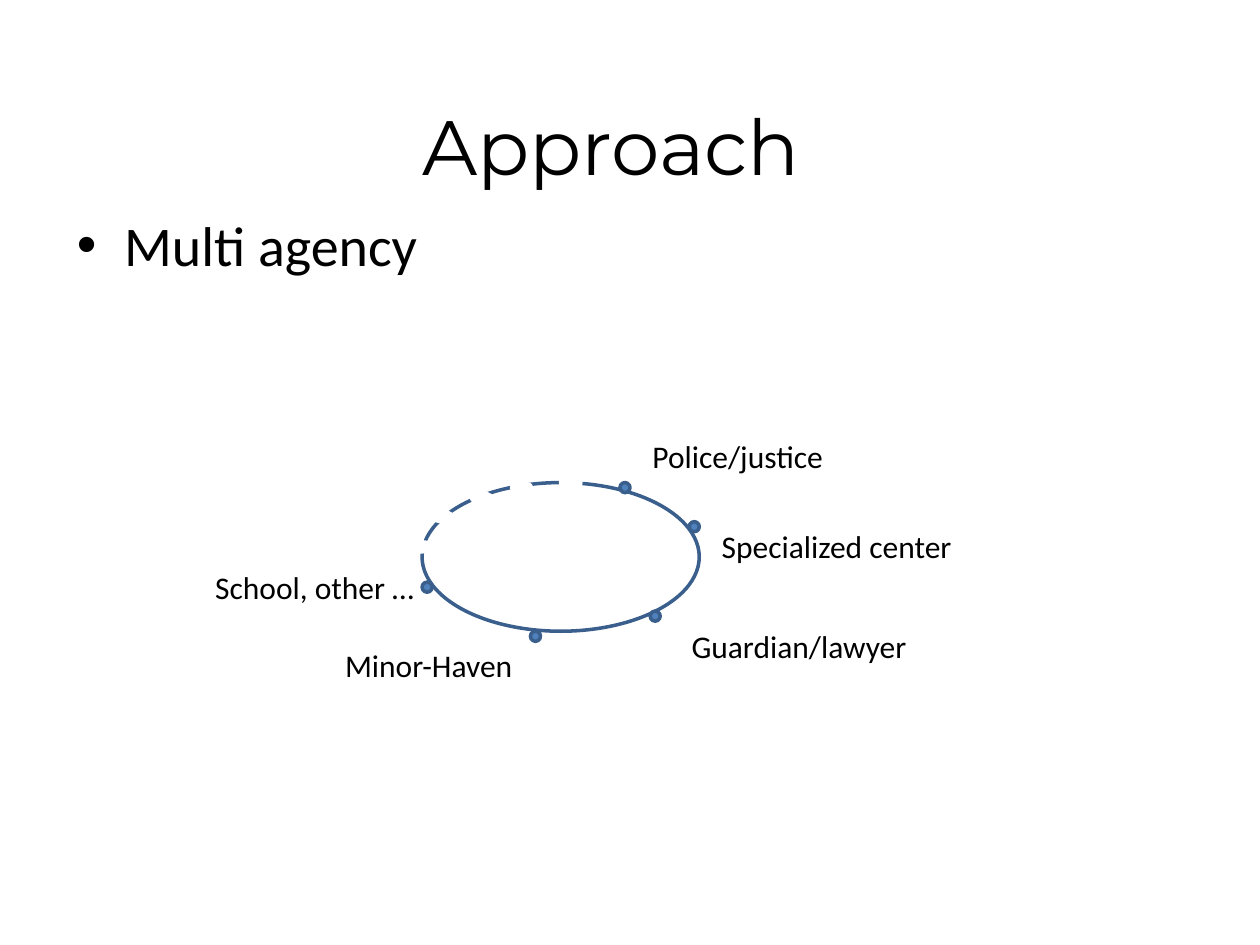
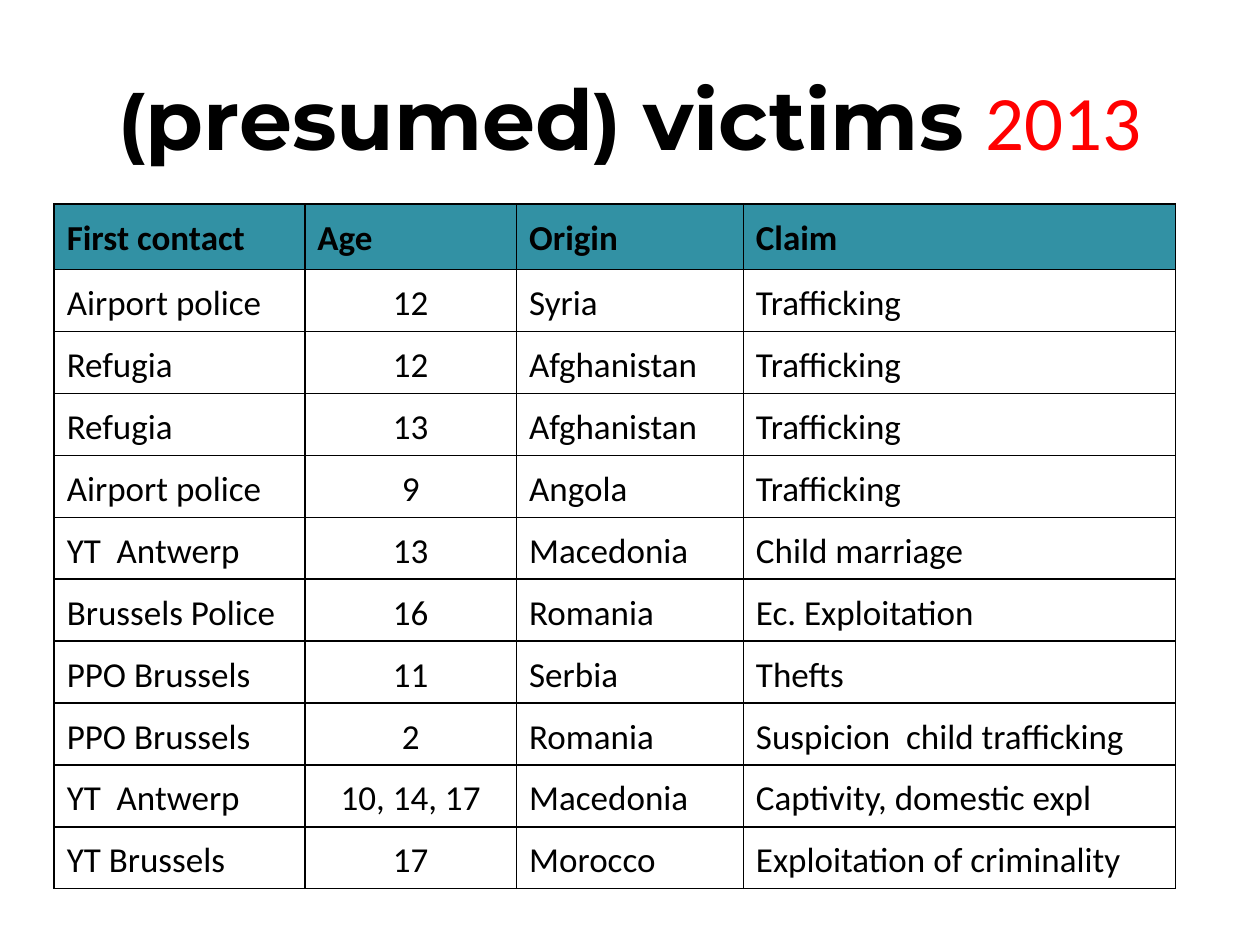
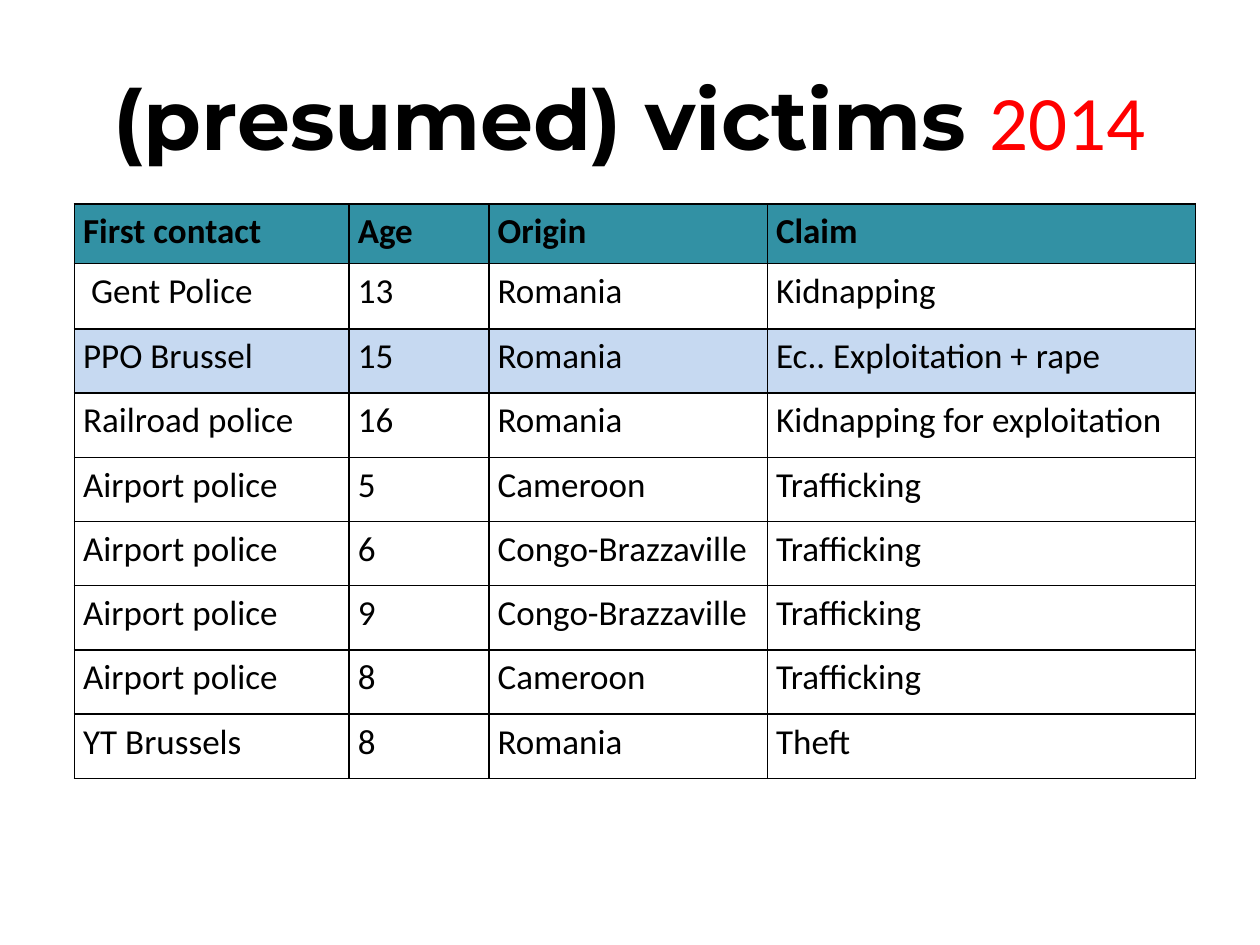
from pptx import Presentation
from pptx.dml.color import RGBColor
from pptx.enum.shapes import MSO_SHAPE
from pptx.enum.text import MSO_ANCHOR, MSO_AUTO_SIZE, PP_ALIGN
from pptx.oxml import parse_xml
from pptx.oxml.ns import nsdecls
from pptx.util import Inches, Pt

OVAL = MSO_SHAPE.OVAL
MIDDLE = MSO_ANCHOR.MIDDLE
LEFT, CENTER = PP_ALIGN.LEFT, PP_ALIGN.CENTER
GROW = MSO_AUTO_SIZE.SHAPE_TO_FIT_TEXT
TITLE_ONLY, CONTENT = 5, 1

COLORS = {
    "ink": "000000",
    "paper": "FFFFFF",
    "red": "FF0000",
    "teal": "3291A4",
    "pale": "C6D9F1",
    "blue": "4F81BD",
    "navy": "3A5F8C",
}
HEAD_FONT, BODY_FONT = "Montserrat", "Calibri"


def color(name):
    return RGBColor.from_string(COLORS[name])


def write(par, text, size=18, font=BODY_FONT, ink="ink", bold=False, align=None, space=None):
    run = par.add_run()
    run.text = text
    run.font.size = Pt(size)
    run.font.name = font
    run.font.bold = bold
    run.font.color.rgb = color(ink)
    if align is not None:
        par.alignment = align
    if space:
        par.line_spacing = space


def place(shape, box):
    shape.left, shape.top, shape.width, shape.height = map(Inches, box)


def edge(cell):
    props = cell._tc.get_or_add_tcPr()
    for index, side in enumerate(("lnL", "lnR", "lnT", "lnB")):
        props.insert(index, parse_xml(
            f'<a:{side} {nsdecls("a")} w="{Pt(1)}"><a:solidFill>'
            f'<a:srgbClr val="{COLORS["ink"]}"/></a:solidFill></a:{side}>'))


class Deck:
    def __init__(self):
        self.prs = Presentation()
        self.prs.slide_width = Inches(10)
        self.prs.slide_height = Inches(7.5)
        self.slide = None

    def start(self, layout):
        self.slide = self.prs.slides.add_slide(self.prs.slide_layouts[layout])

    def title(self, runs, box=(0.5, 0.3, 9, 1.25)):
        shape = self.slide.shapes.title
        place(shape, box)
        shape.text_frame.vertical_anchor = MIDDLE
        for text, style in runs:
            write(shape.text_frame.paragraphs[0], text, align=CENTER, **style)

    def body(self, text, box):
        shape = self.slide.placeholders[1]
        place(shape, box)
        write(shape.text_frame.paragraphs[0], text, size=32)

    def label(self, text, box):
        frame = self.slide.shapes.add_textbox(*map(Inches, box)).text_frame
        frame.word_wrap = True
        frame.auto_size = GROW
        write(frame.paragraphs[0], text)

    def oval(self, box, fill=None, line="navy"):
        shape = self.slide.shapes.add_shape(OVAL, *map(Inches, box))
        shape.shadow.inherit = False
        if fill:
            shape.fill.solid()
            shape.fill.fore_color.rgb = color(fill)
        else:
            shape.fill.background()
        shape.line.color.rgb = color(line)
        shape.line.width = Pt(2)

    def table(self, rows, left, widths, heights, fill=None, marks=(), center=(), inset=None):
        box = (left, 1.62, sum(widths), sum(heights))
        grid = self.slide.shapes.add_table(len(rows), len(widths), *map(Inches, box)).table
        grid.first_row = grid.horz_banding = False
        for col, width in zip(grid.columns, widths):
            col.width = Inches(width)
        for row, height in zip(grid.rows, heights):
            row.height = Inches(height)
        for r, row in enumerate(rows):
            shade = "teal" if r == 0 else "pale" if r in marks else fill
            for c, text in enumerate(row):
                cell = grid.cell(r, c)
                self.cell(cell, shade, inset)
                align = CENTER if r and c in center else LEFT
                write(cell.text_frame.paragraphs[0], text, size=20, bold=r == 0,
                      align=align, space=1.15)

    def cell(self, cell, shade, inset):
        if shade:
            cell.fill.solid()
            cell.fill.fore_color.rgb = color(shade)
        else:
            cell.fill.background()
        if inset is not None:
            cell.margin_left = cell.margin_right = Inches(inset)
            cell.margin_top = cell.margin_bottom = 0
        edge(cell)


BIG = dict(size=48, font=HEAD_FONT, bold=True)
SMALL = dict(BIG, size=44)
YEAR = dict(size=44, ink="red")
HEADS = ("First contact", "Age", "Origin", "Claim")

LABELS = [
    ("Police/justice", (5.08, 3.42, 2.91, 0.4)),
    ("Specialized center", (5.63, 4.13, 2.2, 0.4)),
    ("Guardian/lawyer", (5.39, 4.93, 1.97, 0.4)),
    ("Minor-Haven", (2.64, 5.08, 2.13, 0.4)),
    ("School, other …", (1.61, 4.46, 2.13, 0.4)),
]
DOTS = [(4.92, 3.83), (5.47, 4.14), (5.16, 4.85), (4.21, 5.01), (3.35, 4.62)]
GAPS = [(3.27, 4.3, 0.08), (3.43, 4.06, 0.08), (3.74, 3.91, 0.08),
        (4.06, 3.83, 0.08), (4.45, 3.75, 0.16)]

CASES_2013 = [
    HEADS,
    ("Airport police", "12", "Syria", "Trafficking"),
    ("Refugia", "12", "Afghanistan", "Trafficking"),
    ("Refugia", "13", "Afghanistan", "Trafficking"),
    ("Airport police", "9", "Angola", "Trafficking"),
    ("YT  Antwerp", "13", "Macedonia", "Child marriage"),
    ("Brussels Police", "16", "Romania", "Ec. Exploitation"),
    ("PPO Brussels", "11", "Serbia", "Thefts"),
    ("PPO Brussels", "2", "Romania", "Suspicion  child trafficking"),
    ("YT  Antwerp", "10, 14, 17", "Macedonia", "Captivity, domestic expl"),
    ("YT Brussels", "17", "Morocco", "Exploitation of criminality"),
]
CASES_2014 = [
    HEADS,
    (" Gent Police", "13", "Romania", "Kidnapping"),
    ("PPO Brussel", "15", "Romania", "Ec.. Exploitation + rape"),
    ("Railroad police", "16", "Romania", "Kidnapping for exploitation"),
    ("Airport police", "5", "Cameroon", "Trafficking"),
    ("Airport police", "6", "Congo-Brazzaville", "Trafficking"),
    ("Airport police", "9", "Congo-Brazzaville", "Trafficking"),
    ("Airport police", "8", "Cameroon", "Trafficking"),
    ("YT Brussels", "8", "Romania", "Theft"),
]


def approach(deck):
    deck.start(CONTENT)
    deck.title([("Approach", dict(SMALL, bold=False))], (0.35, 0.52, 9, 1.25))
    deck.body("Multi agency", (0.51, 1.62, 9, 4.95))
    for text, box in LABELS:
        deck.label(text, box)
    deck.oval((3.35, 3.83, 2.2, 1.18))
    for left, top in DOTS:
        deck.oval((left, top, 0.08, 0.08), fill="blue")
    for left, top, height in GAPS:
        deck.oval((left, top, 0.16, height), fill="paper", line="paper")


def victims_2013(deck):
    deck.start(TITLE_ONLY)
    deck.title([("(", SMALL), ("presumed", BIG), (") ", SMALL), ("victims", BIG),
                (" ", SMALL), ("2013", YEAR)])
    deck.table(CASES_2013, 0.43, (1.99, 1.68, 1.8, 3.43), [0.52] + [0.46] * 10,
               fill="paper", center=(1,))


def victims_2014(deck):
    deck.start(TITLE_ONLY)
    deck.title([("(presumed) victims ", BIG), ("2014", YEAR)])
    deck.table(CASES_2014, 0.59, (2.18, 1.11, 2.21, 3.4), [0.47, 0.52] + [0.51] * 7,
               marks=(2,), inset=0.07)


def main():
    deck = Deck()
    approach(deck)
    victims_2013(deck)
    victims_2014(deck)
    deck.prs.save("out.pptx")


if __name__ == "__main__":
    main()
